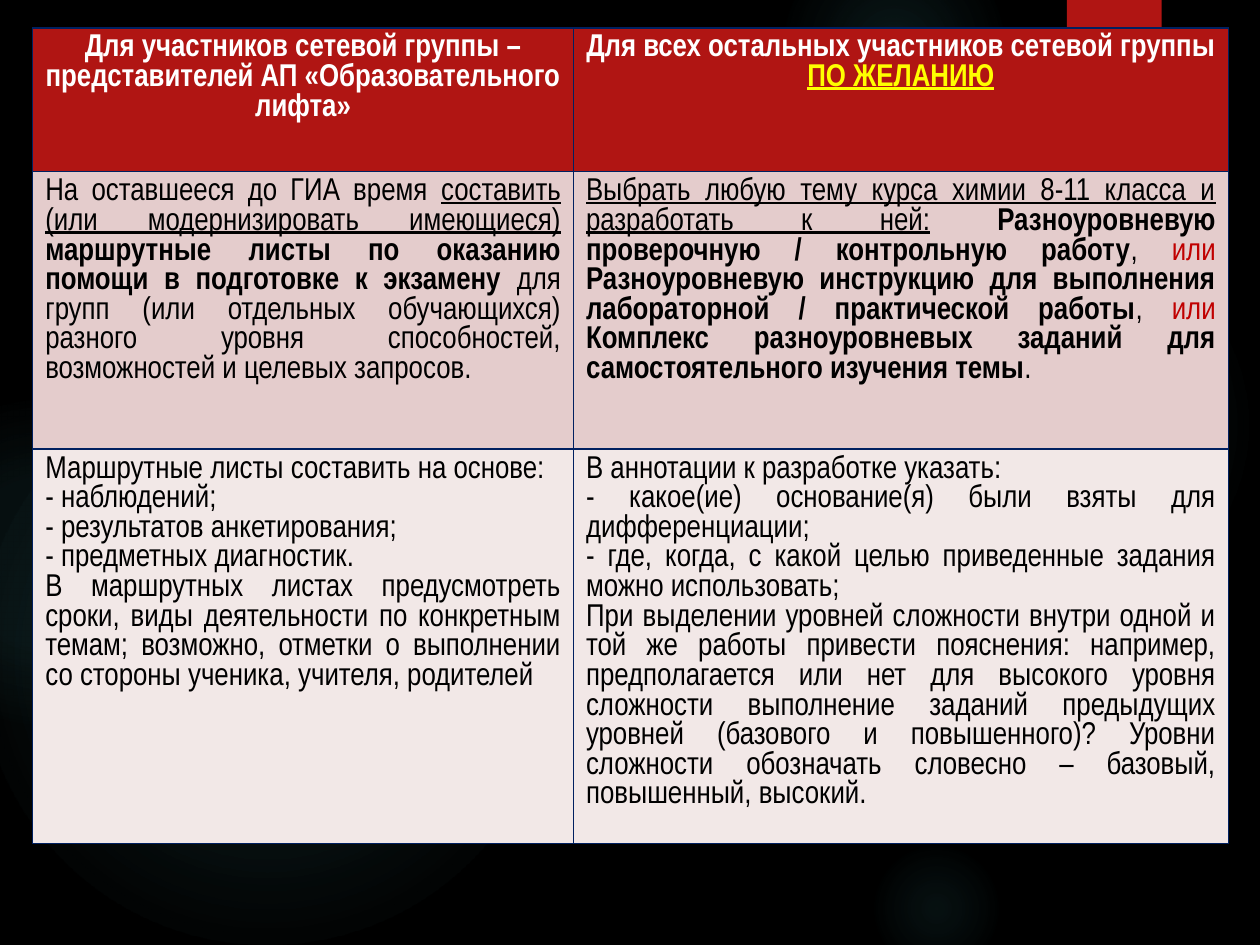
"""Build a slide comparing the tasks of two groups of network participants."""
from pptx import Presentation
from pptx.dml.color import RGBColor
from pptx.enum.shapes import MSO_SHAPE
from pptx.enum.text import PP_ALIGN
from pptx.oxml import parse_xml
from pptx.oxml.ns import nsdecls
from pptx.util import Cm, Pt

OVAL, RECTANGLE = MSO_SHAPE.OVAL, MSO_SHAPE.RECTANGLE
CENTER, JUSTIFY = PP_ALIGN.CENTER, PP_ALIGN.JUSTIFY

BLACK = RGBColor(0x00, 0x00, 0x00)
WHITE = RGBColor(0xFF, 0xFF, 0xFF)
YELLOW = RGBColor(0xFF, 0xFF, 0x00)
RED = RGBColor(0xC0, 0x00, 0x00)
CRIMSON = RGBColor(0xB0, 0x15, 0x13)
ROSE = RGBColor(0xE4, 0xCC, 0xCC)
PALE_ROSE = RGBColor(0xF2, 0xE8, 0xE7)
NAVY = RGBColor(0x00, 0x20, 0x60)
TEAL = RGBColor(0x50, 0xB9, 0xC1)
FONT, FONT_SIZE = "Arial Narrow", Pt(18)

PLAIN = {}
BOLD = {"bold": True}
UNDERLINED = {"underline": True}
ACCENT = {"color": RED}
HEADING = {"bold": True, "color": WHITE}
OPTIONAL = {"bold": True, "underline": True, "color": YELLOW}

# left, top, diameter, then (position %, opacity %) stops
GLOWS = [
    (17.5, 4.65, 7.82, [(0, 7), (36, 6), (69, 0)]),
    (15.8, -1.27, 4.45, [(0, 14), (36, 7), (73, 0)]),
    (17.5, 16.94, 2.74, [(0, 9), (36, 5), (66, 0)]),
    (-0.43, 7.42, 11.63, [(0, 11), (36, 10), (75, 0)]),
    (-2.34, 8.05, 6.55, [(0, 8), (36, 8), (72, 0)]),
]
TAB_BOX = (21.51, 0, 1.91, 3.05)
TABLE_LEFT, TABLE_TOP = 0.66, 0.56
COLUMN_WIDTHS = [10.9, 13.2]
ROW_HEIGHTS = [2.9, 5.59, 7.95]
ROW_STYLES = [(CRIMSON, CENTER), (ROSE, JUSTIFY), (PALE_ROSE, JUSTIFY)]

ROWS = [
    [
        [[("Для участников сетевой группы – представителей АП «Образовательного лифта»", HEADING)]],
        [
            [("Для всех остальных участников сетевой группы ", HEADING)],
            [("ПО ЖЕЛАНИЮ", OPTIONAL)],
        ],
    ],
    [
        [[
            ("На оставшееся до ГИА время ", PLAIN),
            ("составить (или модернизировать имеющиеся) ", UNDERLINED),
            ("маршрутные листы по оказанию помощи в подготовке к экзамену ", BOLD),
            ("для групп (или отдельных обучающихся) разного уровня способностей, "
             "возможностей и целевых запросов.", PLAIN),
        ]],
        [[
            ("Выбрать любую тему курса химии 8-11 класса и разработать к ней:", UNDERLINED),
            (" ", PLAIN),
            ("Разноуровневую проверочную / контрольную работу", BOLD),
            (", ", PLAIN),
            ("или ", ACCENT),
            ("Разноуровневую инструкцию для выполнения лабораторной / практической работы", BOLD),
            (", ", PLAIN),
            ("или ", ACCENT),
            ("Комплекс разноуровневых заданий для самостоятельного изучения темы", BOLD),
            (".", PLAIN),
        ]],
    ],
    [
        [
            [("Маршрутные листы составить на основе:", PLAIN)],
            [("- наблюдений;", PLAIN)],
            [("- результатов анкетирования;", PLAIN)],
            [("- предметных диагностик.", PLAIN)],
            [("В маршрутных листах предусмотреть сроки, виды деятельности по конкретным темам; "
              "возможно, отметки о выполнении со стороны ученика, учителя, родителей", PLAIN)],
        ],
        [
            [("В аннотации к разработке указать:", PLAIN)],
            [("- какое(ие) основание(я) были взяты для дифференциации; ", PLAIN)],
            [("- где, когда, с какой целью приведенные задания можно использовать;", PLAIN)],
            [("При выделении уровней сложности внутри одной и той же работы привести пояснения: "
              "например, предполагается или нет для высокого уровня сложности выполнение заданий "
              "предыдущих уровней (базового и повышенного)? Уровни сложности обозначать словесно – "
              "базовый, повышенный, высокий.", PLAIN)],
        ],
    ],
]


def add_plain_shape(slide, kind, box):
    shape = slide.shapes.add_shape(kind, *map(Cm, box))
    shape.shadow.inherit = False
    shape.line.fill.background()
    return shape


def add_glow(slide, left, top, diameter, stops):
    shape = add_plain_shape(slide, OVAL, (left, top, diameter, diameter))
    shape.fill.background()
    stop_xml = "".join(
        f'<a:gs pos="{position * 1000}"><a:srgbClr val="{TEAL}">'
        f'<a:alpha val="{opacity * 1000}"/></a:srgbClr></a:gs>'
        for position, opacity in stops
    )
    gradient = parse_xml(
        f'<a:gradFill {nsdecls("a")} rotWithShape="1"><a:gsLst>{stop_xml}</a:gsLst>'
        '<a:path path="circle"><a:fillToRect l="50000" t="50000" r="50000" b="50000"/></a:path>'
        "</a:gradFill>"
    )
    properties = shape.element.spPr
    properties.replace(properties.find("{*}noFill"), gradient)


def add_tab(slide):
    shape = add_plain_shape(slide, RECTANGLE, TAB_BOX)
    shape.fill.solid()
    shape.fill.fore_color.rgb = CRIMSON
    shape.element.spPr.find("{*}effectLst").append(parse_xml(
        f'<a:outerShdw {nsdecls("a")} blurRad="{Pt(3)}" dist="{Pt(2)}" dir="5400000">'
        f'<a:srgbClr val="{BLACK}"><a:alpha val="45000"/></a:srgbClr></a:outerShdw>'
    ))


def add_borders(cell):
    properties = cell._tc.get_or_add_tcPr()
    for index, side in enumerate("LRTB"):
        properties.insert(index, parse_xml(
            f'<a:ln{side} {nsdecls("a")} w="{Pt(1)}"><a:solidFill>'
            f'<a:srgbClr val="{NAVY}"/></a:solidFill></a:ln{side}>'
        ))


def fill_cell(cell, paragraphs, color, alignment):
    cell.fill.solid()
    cell.fill.fore_color.rgb = color
    add_borders(cell)
    frame = cell.text_frame
    for index, runs in enumerate(paragraphs):
        paragraph = frame.add_paragraph() if index else frame.paragraphs[0]
        paragraph.alignment = alignment
        for text, style in runs:
            run = paragraph.add_run()
            run.text = text
            run.font.name, run.font.size = FONT, FONT_SIZE
            run.font.bold = style.get("bold", False)
            run.font.underline = style.get("underline", False)
            run.font.color.rgb = style.get("color", BLACK)


def add_task_table(slide):
    table = slide.shapes.add_table(
        len(ROWS), len(COLUMN_WIDTHS), Cm(TABLE_LEFT), Cm(TABLE_TOP),
        Cm(sum(COLUMN_WIDTHS)), Cm(sum(ROW_HEIGHTS)),
    ).table
    for column, width in zip(table.columns, COLUMN_WIDTHS):
        column.width = Cm(width)
    for row, height, contents, style in zip(table.rows, ROW_HEIGHTS, ROWS, ROW_STYLES):
        row.height = Cm(height)
        for cell, paragraphs in zip(row.cells, contents):
            fill_cell(cell, paragraphs, *style)


def main():
    presentation = Presentation()
    presentation.slide_width, presentation.slide_height = Cm(25.4), Cm(19.05)
    slide = presentation.slides.add_slide(presentation.slide_layouts.get_by_name("Blank"))
    slide.background.fill.solid()
    slide.background.fill.fore_color.rgb = BLACK
    for glow in GLOWS:
        add_glow(slide, *glow)
    add_tab(slide)
    add_task_table(slide)
    presentation.save("out.pptx")


if __name__ == "__main__":
    main()
